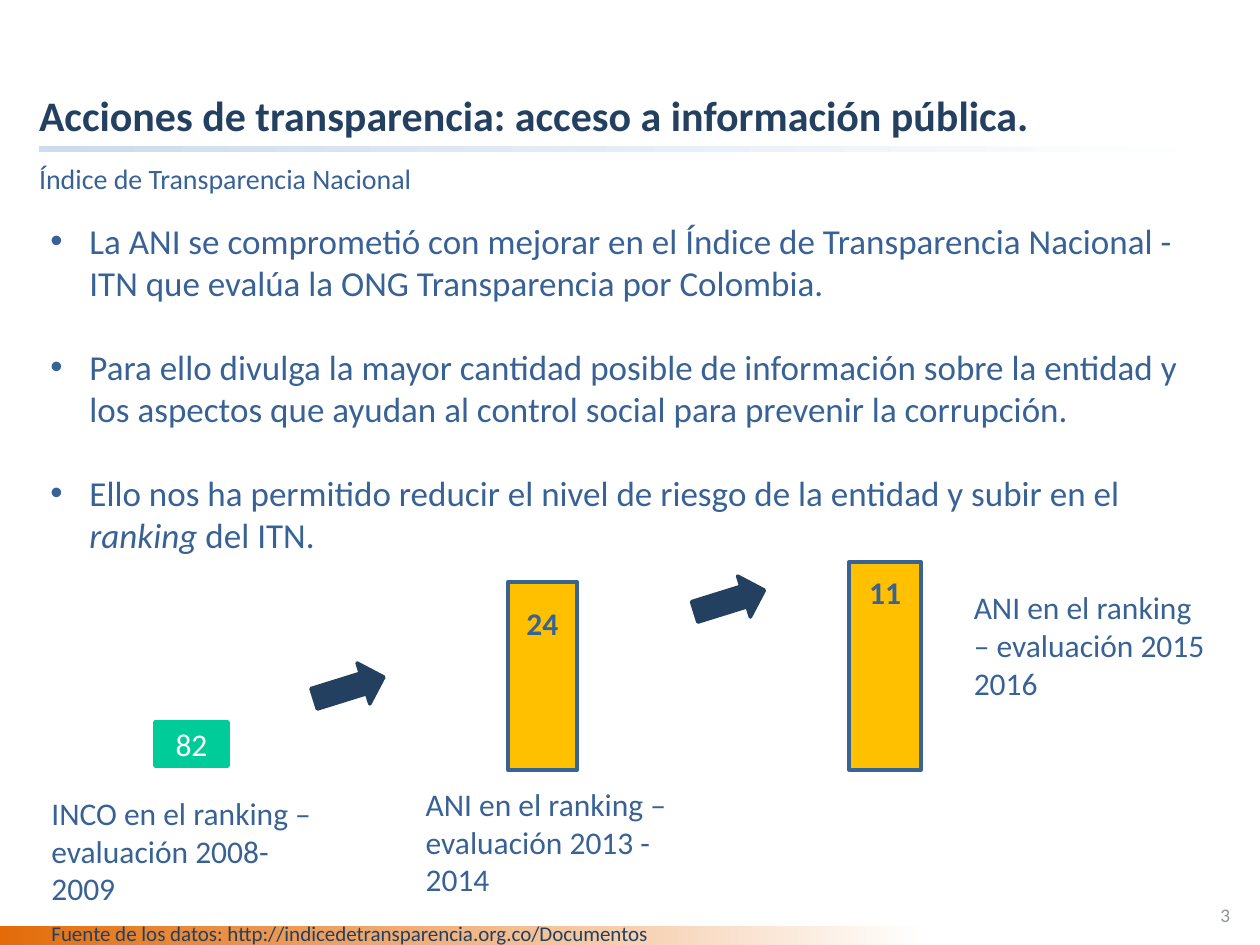
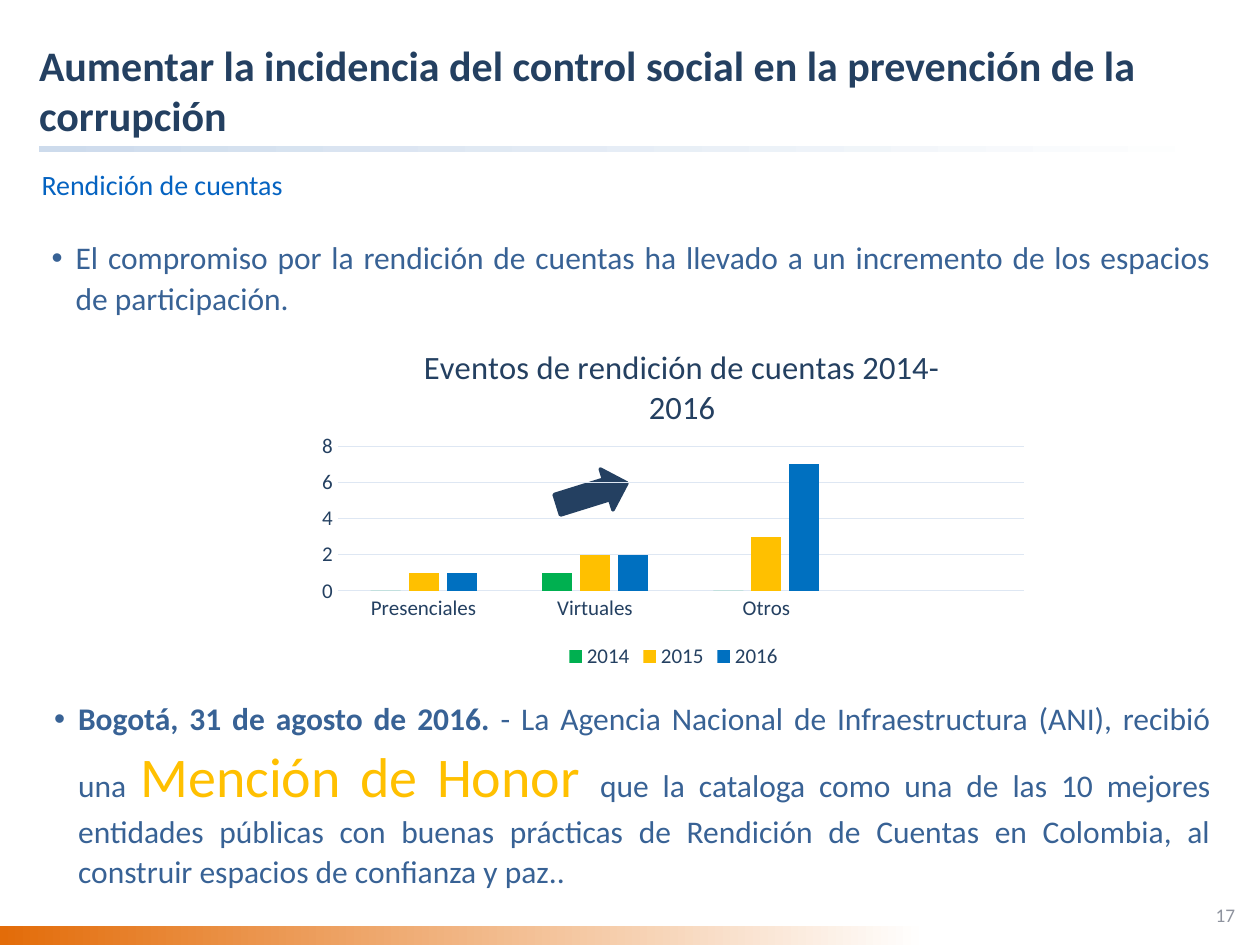
"""Build two slides on transparency and accountability."""
import lxml.etree
import pptx
import pptx.chart.data
import pptx.dml.color
import pptx.enum.chart
import pptx.enum.shapes
import pptx.enum.text
import pptx.oxml.ns
import pptx.util

Inches = pptx.util.Inches
Pt = pptx.util.Pt
qn = pptx.oxml.ns.qn
ALIGN = pptx.enum.text.PP_ALIGN
ANCHOR = pptx.enum.text.MSO_ANCHOR
SHAPE = pptx.enum.shapes.MSO_SHAPE

FONT = "Calibri"
COLORS = {
    "navy": "244061", "text": "386295", "border": "396395", "link": "0563C1",
    "gray": "8E939E", "rule": "CDDBEC", "orange": "E36C09", "white": "FFFFFF",
    "teal": "00CC99", "gold": "FFC000", "green": "00B050", "blue": "0070C0",
    "grid": "DEE7F3",
}


def rgb(name):
    """Return the named colour."""
    return pptx.dml.color.RGBColor.from_string(COLORS[name])


def style_font(font, size=18, color="text", bold=False, italic=False):
    """Apply the deck's typeface with a size, colour and emphasis."""
    font.name, font.size = FONT, Pt(size)
    font.bold, font.italic = bold, italic
    font.color.rgb = rgb(color)


def add_bullet(paragraph, indent):
    """Give a paragraph a hanging round bullet."""
    properties = paragraph._p.get_or_add_pPr()
    properties.set("marL", str(Inches(indent)))
    properties.set("indent", str(-Inches(indent)))
    lxml.etree.SubElement(properties, qn("a:buFont")).set("typeface", "Arial")
    lxml.etree.SubElement(properties, qn("a:buChar")).set("char", "•")


def write(frame, paragraphs, align=ALIGN.LEFT, anchor=ANCHOR.TOP, margins=(0.1, 0.05),
          bullet=None, gap=0, line_spacing=1.0, **font_format):
    """Fill a text frame with a string, or paragraphs of (text, format) runs."""
    if isinstance(paragraphs, str):
        paragraphs = [[(paragraphs, {})]]
    frame.word_wrap = True
    frame.auto_size = pptx.enum.text.MSO_AUTO_SIZE.NONE
    frame.vertical_anchor = anchor
    frame.margin_left = frame.margin_right = Inches(margins[0])
    frame.margin_top = frame.margin_bottom = Inches(margins[1])
    for index, runs in enumerate(paragraphs):
        paragraph = frame.add_paragraph() if index else frame.paragraphs[0]
        if bullet:
            add_bullet(paragraph, bullet)
        paragraph.alignment = align
        paragraph.line_spacing = line_spacing
        paragraph.space_before = Pt(gap if index else 0)
        for text, changes in runs:
            run = paragraph.add_run()
            run.text = text
            style_font(run.font, **{**font_format, **changes})


def set_layout(element, position, **fractions):
    """Place a chart part by fractions of the chart area."""
    for old_layout in element.findall(qn("c:layout")):
        element.remove(old_layout)
    layout = lxml.etree.Element(qn("c:layout"))
    manual = lxml.etree.SubElement(layout, qn("c:manualLayout"))
    if "w" in fractions:
        lxml.etree.SubElement(manual, qn("c:layoutTarget")).set("val", "inner")
    for mode in ("xMode", "yMode"):
        lxml.etree.SubElement(manual, qn(f"c:{mode}")).set("val", "edge")
    for name, value in fractions.items():
        lxml.etree.SubElement(manual, qn(f"c:{name}")).set("val", str(value))
    element.insert(position, layout)


class Deck:
    """Hold the shared style and the current slide."""

    def __init__(self):
        """Start an empty presentation."""
        self.presentation = pptx.Presentation()
        self.presentation.slide_width = Inches(10)
        self.presentation.slide_height = Inches(7.5)
        self.slide = None

    def start_slide(self, layout_index, title, number):
        """Add a slide with its bands, title and number."""
        layout = self.presentation.slide_layouts[layout_index]
        self.slide = self.presentation.slides.add_slide(layout)
        self.band(0.31, 1.16, 9.39, 0.05, "rule")
        self.band(0, 7.35, 7.35, 0.15, "orange")
        self.placeholder(0, (0.31, 0.29, 9.4, 0.82), title, anchor=ANCHOR.BOTTOM,
                         margins=(0, 0), size=24, color="navy", bold=True)
        self.text(9.49, 7.06, 0.47, 0.4, number, align=ALIGN.CENTER,
                  anchor=ANCHOR.MIDDLE, size=11, color="gray")

    def placeholder(self, index, box, paragraphs, **text_format):
        """Move and fill a template placeholder."""
        shape = self.slide.placeholders[index]
        shape.left, shape.top, shape.width, shape.height = map(Inches, box)
        write(shape.text_frame, paragraphs, **text_format)

    def text(self, left, top, width, height, paragraphs, **text_format):
        """Add a text box."""
        box = self.slide.shapes.add_textbox(*map(Inches, (left, top, width, height)))
        write(box.text_frame, paragraphs, **text_format)

    def shape(self, kind, left, top, width, height):
        """Add a preset shape without a shadow."""
        shape = self.slide.shapes.add_shape(kind, *map(Inches, (left, top, width, height)))
        shape.shadow.inherit = False
        return shape

    def paint(self, shape, fill, line, line_width=2):
        """Set a solid fill and an outline."""
        shape.fill.solid()
        shape.fill.fore_color.rgb = rgb(fill)
        shape.line.color.rgb = rgb(line)
        shape.line.width = Pt(line_width)

    def band(self, left, top, width, height, color):
        """Add a strip that fades to white on the right."""
        strip = self.shape(SHAPE.RECTANGLE, left, top, width, height)
        strip.line.fill.background()
        strip.fill.gradient()
        strip.fill.gradient_angle = 0
        for stop, name in zip(strip.fill.gradient_stops, (color, "white")):
            stop.color.rgb = rgb(name)

    def bar(self, left, top, width, height, text, fill, line, line_width, **text_format):
        """Add a labelled ranking bar."""
        bar = self.shape(SHAPE.RECTANGLE, left, top, width, height)
        self.paint(bar, fill, line, line_width)
        write(bar.text_frame, text, align=ALIGN.CENTER, **text_format)

    def rising_arrow(self, left, top):
        """Add an arrow tilted upwards."""
        arrow = self.shape(SHAPE.RIGHT_ARROW, left, top, 0.58, 0.34)
        arrow.rotation = 342.7
        self.paint(arrow, "navy", "navy")

    def column_chart(self, box, title, categories, series):
        """Add a clustered column chart from (name, values, colour) series."""
        data = pptx.chart.data.CategoryChartData()
        data.categories = categories
        for name, values, _ in series:
            data.add_series(name, values)
        chart = self.slide.shapes.add_chart(
            pptx.enum.chart.XL_CHART_TYPE.COLUMN_CLUSTERED, *map(Inches, box), data).chart
        style_font(chart.font, 12, "navy")
        chart.has_title = True
        title_frame = chart.chart_title.text_frame
        title_frame.text = title
        style_font(title_frame.paragraphs[0].runs[0].font, 18.6, "navy")
        chart.has_legend = True
        chart.legend.position = pptx.enum.chart.XL_LEGEND_POSITION.BOTTOM
        chart.legend.include_in_layout = False
        style_font(chart.legend.font, 12, "navy")
        plot = chart.plots[0]
        plot.gap_width, plot.overlap, plot.vary_by_categories = 219, -27, False
        for chart_series, (_, _, color) in zip(plot.series, series):
            chart_series.format.fill.solid()
            chart_series.format.fill.fore_color.rgb = rgb(color)
        for axis in (chart.category_axis, chart.value_axis):
            axis.major_tick_mark = pptx.enum.chart.XL_TICK_MARK.NONE
            style_font(axis.tick_labels.font, 12, "navy")
        values_axis = chart.value_axis
        values_axis.minimum_scale, values_axis.maximum_scale = 0, 8
        values_axis.major_unit = 2
        values_axis.format.line.fill.background()
        for line in (chart.category_axis.format.line, values_axis.major_gridlines.format.line):
            line.color.rgb = rgb("grid")
            line.width = Pt(0.75)
        set_layout(chart.chart_title._element, 1, x=0.15, y=0.07)
        plot_area = chart._chartSpace.find(".//" + qn("c:plotArea"))
        set_layout(plot_area, 0, x=0.04, y=0.37, w=0.94, h=0.4)


def build_ranking_slide(deck):
    """Show the rise in the national transparency ranking."""
    deck.start_slide(1, "Acciones de transparencia: acceso a información pública.", "3")
    deck.placeholder(1, (0.3, 1.69, 9.4, 3.13), [
        [("La ANI se comprometió con mejorar en el Índice de Transparencia Nacional - "
          "ITN que evalúa la ONG Transparencia por Colombia.", {})],
        [("Para ello divulga la mayor cantidad posible de información sobre la entidad y "
          "los aspectos que ayudan al control social para prevenir la corrupción.", {})],
        [("Ello nos ha permitido reducir el nivel de riesgo de la entidad y subir en el ", {}),
         ("ranking", {"italic": True}), (" del ITN.", {})],
    ], bullet=0.31, gap=24, size=20)
    deck.bar(1.23, 5.73, 0.58, 0.35, "82", "teal", "teal", 2,
             anchor=ANCHOR.MIDDLE, color="white")
    for left, top, width, height, rank, inset in (
            (4.03, 4.62, 0.55, 1.49, "24", 0.17), (6.74, 4.46, 0.57, 1.65, "11", 0.09)):
        deck.bar(left, top, width, height, rank, "gold", "border", 2.25,
                 margins=(0.1, inset), color="border", bold=True)
    for left, top, width, label in (
            (0.31, 6.25, 2.43, "INCO en el ranking – evaluación 2008-2009"),
            (3.28, 6.18, 2.41, "ANI en el ranking – evaluación 2013 - 2014"),
            (7.63, 4.62, 2.09, "ANI en el ranking – evaluación 2015 2016")):
        deck.text(left, top, width, 1.01, label)
    deck.rising_arrow(2.48, 5.29)
    deck.rising_arrow(5.5, 4.6)
    deck.text(0.31, 7.26, 6.9, 0.3,
              "Fuente de los datos: http://indicedetransparencia.org.co/Documentos",
              size=12, color="navy")
    deck.text(0.31, 1.28, 4.69, 0.27, "Índice de Transparencia Nacional",
              margins=(0, 0), size=16)


def build_accountability_slide(deck):
    """Show the accountability events and the award."""
    deck.start_slide(
        3, "Aumentar la incidencia del control social en la prevención de la corrupción", "17")
    list_style = {"align": ALIGN.JUSTIFY, "bullet": 0.19, "line_spacing": 1.07}
    deck.placeholder(1, (0.31, 1.82, 9.4, 0.73),
                     "El compromiso por la rendición de cuentas ha llevado a un incremento "
                     "de los espacios de participación.", **list_style)
    deck.text(0.33, 1.33, 8.92, 0.27, "Rendición de cuentas",
              margins=(0, 0), size=16, color="link")
    deck.rising_arrow(4.41, 3.75)
    deck.column_chart(
        (2.45, 2.48, 5.79, 2.87), "Eventos de rendición de cuentas 2014-2016",
        ["Presenciales", "Virtuales", "Otros", ""],
        [("2014", (0, 1, 0, None), "green"),
         ("2015", (1, 2, 3, None), "gold"),
         ("2016", (1, 2, 7, None), "blue")])
    deck.placeholder(2, (0.33, 5.48, 9.38, 1.65), [[
        ("Bogotá, 31 de agosto de 2016.", {"bold": True}),
        (" - La Agencia Nacional de Infraestructura (ANI), recibió una ", {}),
        ("Mención de Honor ", {"size": 32, "color": "gold"}),
        ("que la cataloga como una de las 10 mejores entidades públicas con buenas "
         "prácticas de Rendición de Cuentas en Colombia, al construir espacios de "
         "confianza y paz..", {}),
    ]], **list_style)


def main():
    """Build and save the presentation."""
    deck = Deck()
    build_ranking_slide(deck)
    build_accountability_slide(deck)
    deck.presentation.save("out.pptx")


if __name__ == "__main__":
    main()
